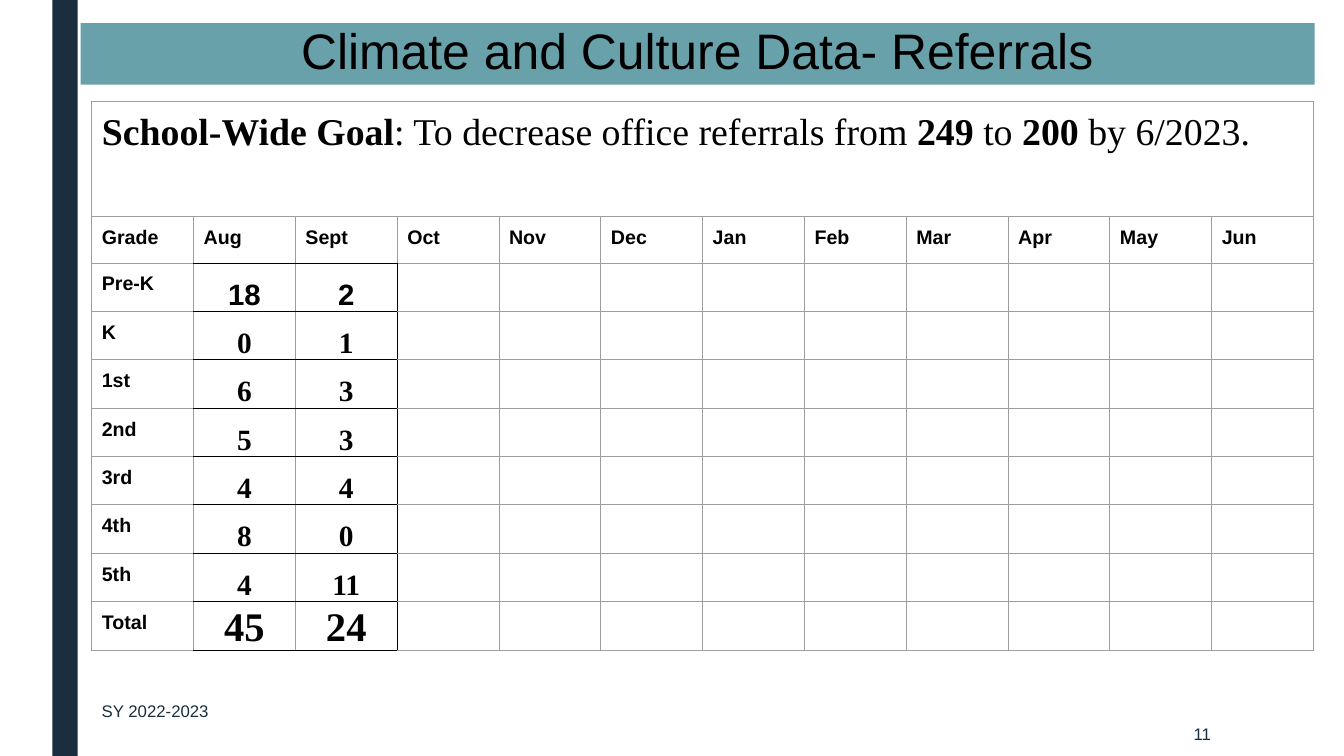
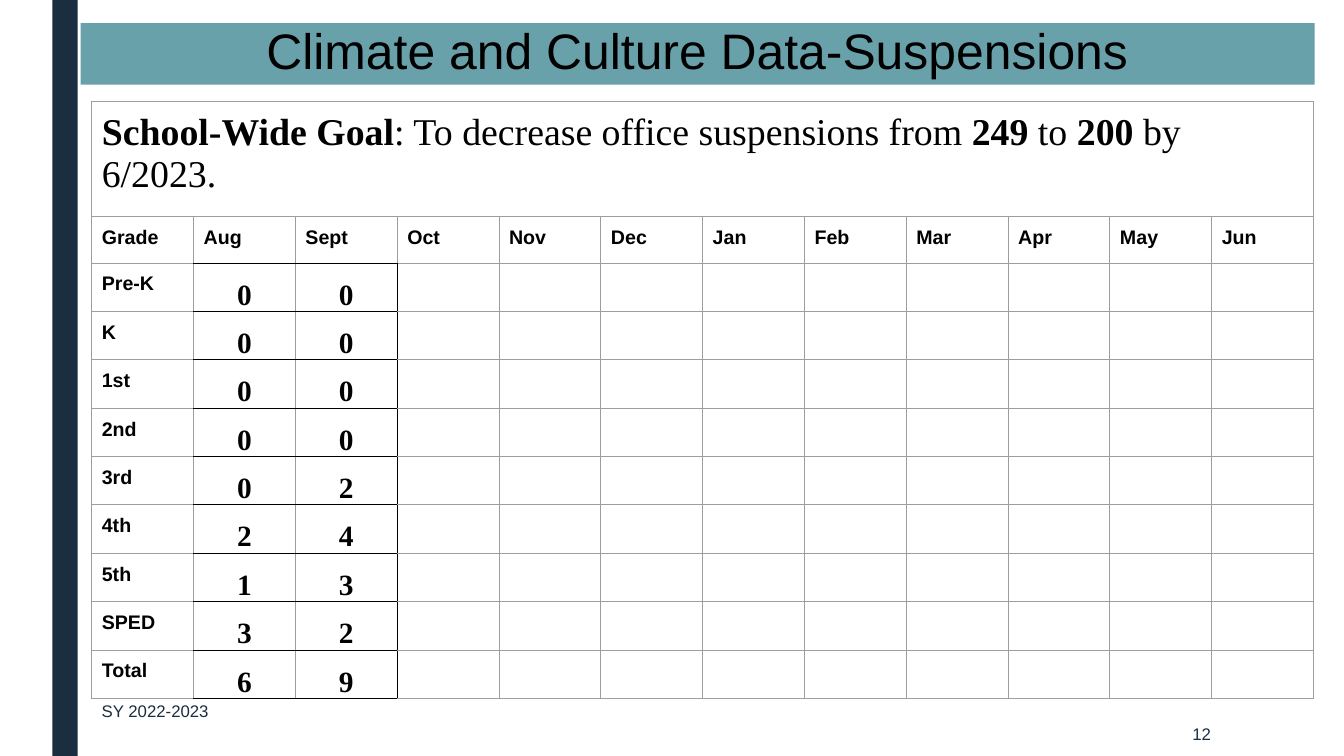
from lxml.etree import SubElement
from pptx import Presentation
from pptx.dml.color import RGBColor
from pptx.enum.shapes import MSO_SHAPE
from pptx.enum.text import MSO_ANCHOR, PP_ALIGN
from pptx.oxml.ns import qn
from pptx.util import Pt

SCALE = 9144
NAVY = RGBColor(0x1A, 0x2E, 0x40)
TEAL = RGBColor(0x69, 0xA1, 0xAB)
BLACK = RGBColor(0x00, 0x00, 0x00)
GRAY = RGBColor(0x9E, 0x9E, 0x9E)
SANS = "Arial"
SERIF = "Times New Roman"

TITLE_FONT = {"name": SANS, "size": Pt(35.6), "color": BLACK}
FOOTER_FONT = {"name": SANS, "size": Pt(12), "color": NAVY}
GOAL_FONT = {"name": SERIF, "size": Pt(27), "color": BLACK}
LABEL_FONT = {"name": SANS, "size": Pt(14), "bold": True, "color": BLACK}
COUNT_FONT = {"name": SERIF, "size": Pt(21), "bold": True, "color": BLACK}

HEADINGS = ["Grade", "Aug", "Sept", "Oct", "Nov", "Dec",
            "Jan", "Feb", "Mar", "Apr", "May", "Jun"]
COLUMN_WIDTH = 101
GOAL_HEIGHT = 114
HEADING_HEIGHT = 46
GRADE_HEIGHT = 48
FIRST_GRADE_ROW = 2
FILLED_COLUMNS = (1, 2)

REFERRALS = {
    "title": "Climate and Culture Data- Referrals",
    "number": "11",
    "topic": "referrals",
    "counts": [("Pre-K", 18, 2), ("K", 0, 1), ("1st", 6, 3), ("2nd", 5, 3),
               ("3rd", 4, 4), ("4th", 8, 0), ("5th", 4, 11), ("Total", 45, 24)],
    "row_fonts": {"Pre-K": {"name": SANS}, "Total": {"size": Pt(29)}},
}
SUSPENSIONS = {
    "title": "Climate and Culture Data-Suspensions",
    "number": "12",
    "topic": "suspensions",
    "counts": [("Pre-K", 0, 0), ("K", 0, 0), ("1st", 0, 0), ("2nd", 0, 0),
               ("3rd", 0, 2), ("4th", 2, 4), ("5th", 1, 3), ("SPED", 3, 2),
               ("Total", 6, 9)],
    "row_fonts": {},
}


def px(length):
    return length * SCALE


def set_values(target, values):
    for name, value in values.items():
        if name == "color":
            target.color.rgb = value
        else:
            setattr(target, name, value)


def add_span(para, text, font):
    span = para.add_run()
    span.text = text
    set_values(span.font, font)


def add_band(page, left, top, width, height, color):
    band = page.shapes.add_shape(
        MSO_SHAPE.RECTANGLE, px(left), px(top), px(width), px(height))
    band.shadow.inherit = False
    band.fill.solid()
    band.fill.fore_color.rgb = color
    band.line.fill.background()
    return band


def add_title(page, text):
    band = add_band(page, 80, 23, 1224, 61, TEAL)
    band.text_frame.vertical_anchor = MSO_ANCHOR.MIDDLE
    para = band.text_frame.paragraphs[0]
    set_values(para, {"alignment": PP_ALIGN.CENTER, "line_spacing": 0.89})
    add_span(para, text, TITLE_FONT)


def add_footer(page, left, top, width, text, alignment):
    box = page.shapes.add_textbox(px(left), px(top), px(width), px(44))
    set_values(box.text_frame, {"word_wrap": True,
                                "vertical_anchor": MSO_ANCHOR.MIDDLE})
    para = box.text_frame.paragraphs[0]
    para.alignment = alignment
    add_span(para, text, FOOTER_FONT)


def set_margins(cell, side, end):
    set_values(cell, {"margin_left": px(side), "margin_right": px(side),
                      "margin_top": px(end), "margin_bottom": px(end)})


def black_edges(row, column):
    filled = column in FILLED_COLUMNS
    last_filled = FILLED_COLUMNS[-1]
    in_grades = row >= FIRST_GRADE_ROW
    return {
        "L": in_grades and column == last_filled + 1,
        "R": in_grades and column == last_filled,
        "T": in_grades and filled,
        "B": row >= FIRST_GRADE_ROW - 1 and filled,
    }


def style_cell(cell, row, column):
    properties = cell._tc.get_or_add_tcPr()
    for edge, is_black in black_edges(row, column).items():
        line = SubElement(properties, qn(f"a:ln{edge}"), w=str(Pt(0.75)))
        fill = SubElement(line, qn("a:solidFill"))
        SubElement(fill, qn("a:srgbClr"), val=str(BLACK if is_black else GRAY))
    cell.fill.background()


def write_goal(cell, topic):
    set_margins(cell, 10, 10)
    para = cell.text_frame.paragraphs[0]
    parts = [("School-Wide Goal", True),
             (f": To decrease office {topic} from ", False),
             ("249", True), (" to ", False), ("200 ", True),
             ("by 6/2023.", False)]
    for text, bold in parts:
        add_span(para, text, {**GOAL_FONT, "bold": bold})


def write_label(cell, text):
    set_margins(cell, 10, 10)
    add_span(cell.text_frame.paragraphs[0], text, LABEL_FONT)


def write_count(cell, count, row_font):
    set_margins(cell, 8, 0)
    cell.vertical_anchor = MSO_ANCHOR.BOTTOM
    para = cell.text_frame.paragraphs[0]
    para.alignment = PP_ALIGN.CENTER
    add_span(para, str(count), {**COUNT_FONT, **row_font})


def add_goal_table(page, topic, counts, row_fonts):
    heights = [GOAL_HEIGHT, HEADING_HEIGHT] + [GRADE_HEIGHT] * len(counts)
    frame = page.shapes.add_table(
        len(heights), len(HEADINGS), px(91), px(101),
        px(COLUMN_WIDTH * len(HEADINGS)), px(sum(heights)))
    table = frame.table
    set_values(table, {"first_row": False, "horz_banding": False})
    for column in table.columns:
        column.width = px(COLUMN_WIDTH)
    for row, height in enumerate(heights):
        table.rows[row].height = px(height)
        for column in range(len(HEADINGS)):
            style_cell(table.cell(row, column), row, column)

    table.cell(0, 0).merge(table.cell(0, len(HEADINGS) - 1))
    write_goal(table.cell(0, 0), topic)
    for column, heading in enumerate(HEADINGS):
        write_label(table.cell(1, column), heading)
    for row, (grade, *values) in enumerate(counts, FIRST_GRADE_ROW):
        write_label(table.cell(row, 0), grade)
        for column, count in zip(FILLED_COLUMNS, values):
            write_count(table.cell(row, column), count, row_fonts.get(grade, {}))


def add_data_page(deck, content):
    page = deck.slides.add_slide(deck.slide_layouts[6])
    add_band(page, 52, 0, 25, 750, NAVY)
    add_title(page, content["title"])
    add_footer(page, 1036, 706, 175, content["number"], PP_ALIGN.RIGHT)
    add_footer(page, 91, 683, 206, "SY 2022-2023", PP_ALIGN.LEFT)
    add_goal_table(page, content["topic"], content["counts"], content["row_fonts"])


def main():
    deck = Presentation()
    set_values(deck, {"slide_width": px(1333), "slide_height": px(750)})
    for content in (REFERRALS, SUSPENSIONS):
        add_data_page(deck, content)
    deck.save("out.pptx")


if __name__ == "__main__":
    main()
